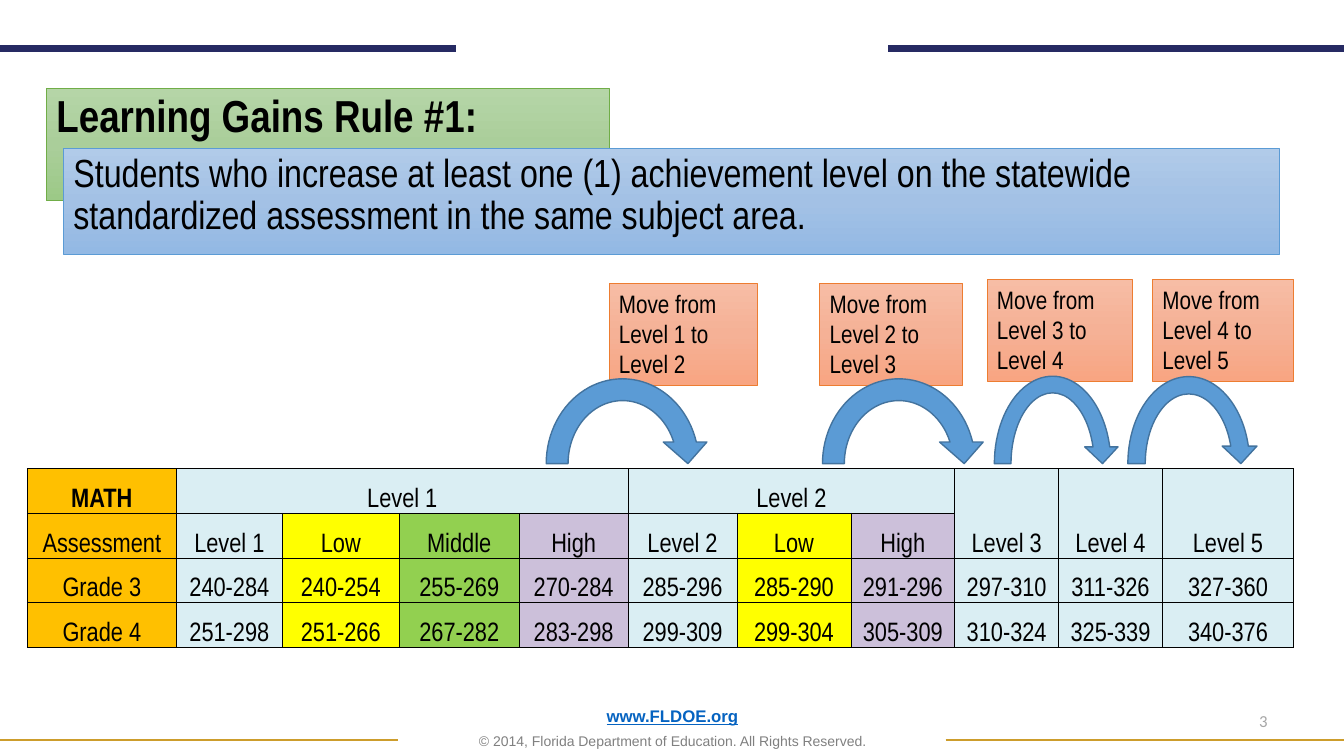
from copy import deepcopy
from dataclasses import dataclass

from lxml.etree import SubElement
from pptx import Presentation
from pptx.dml.color import RGBColor
from pptx.enum.shapes import MSO_CONNECTOR, MSO_SHAPE
from pptx.enum.text import MSO_ANCHOR, MSO_AUTO_SIZE, PP_ALIGN
from pptx.oxml.ns import qn
from pptx.util import Inches, Pt


@dataclass(frozen=True)
class Theme:
    width: float = 13.33
    height: float = 7.5
    narrow: str = "Arial Narrow"
    sans: str = "Arial"
    number_font: str = "Calibri"
    title_size: int = 32
    body_size: int = 28
    table_size: int = 19
    callout_size: int = 18
    footer_size: int = 12
    copyright_size: int = 10
    black: str = "000000"
    navy: str = "262A63"
    gold: str = "CD9D2C"
    link: str = "0563C1"
    grey: str = "808080"
    pale_grey: str = "A6A6A6"
    green: tuple = ("B5D5A7", "AACE9A", "9CC987")
    green_line: str = "70AD47"
    blue: tuple = ("B1CBE9", "A3C1E5", "93B9E4")
    blue_line: str = "5B9BD5"
    orange: tuple = ("F7BDA5", "F5B196", "F8A582")
    orange_line: str = "ED7D31"
    arrow_line: str = "43739E"
    head: str = "FFC000"
    level: str = "DAEEF3"
    low: str = "FFFF00"
    middle: str = "92D050"
    high: str = "CCC0DA"


T = Theme()


def rgb(value):
    return RGBColor.from_string(value)


def emu(box):
    return [Inches(v) for v in box]


def style(p, size, color, font=T.narrow, bold=False, align=PP_ALIGN.LEFT, spacing=None):
    p.alignment = align
    p.line_spacing = spacing
    for r in p.runs:
        r.font.name, r.font.size, r.font.bold = font, Pt(size), bold
        r.font.color.rgb = rgb(color)


def gradient_panel(sp, colors, line):
    """Fill a shape with a three-stop vertical gradient and a thin outline."""
    sp.fill.gradient()
    sp.fill.gradient_angle = 270
    stops = sp._element.spPr.find(".//" + qn("a:gsLst"))
    stops.insert(1, deepcopy(stops[0]))
    for stop, color, position in zip(sp.fill.gradient_stops, colors, (0, 0.5, 1)):
        stop.color.rgb = rgb(color)
        stop.position = position
    sp.line.color.rgb = rgb(line)
    sp.line.width = Pt(0.5)


def add_panel(s, box, text, size, colors, line, spacing=None):
    sp = s.shapes.add_shape(MSO_SHAPE.RECTANGLE, *emu(box))
    sp.shadow.inherit = False
    gradient_panel(sp, colors, line)
    tf = sp.text_frame
    tf.text = text
    tf.word_wrap = True
    tf.vertical_anchor = MSO_ANCHOR.TOP
    style(tf.paragraphs[0], size, T.black, spacing=spacing)


def add_rules(s, y, length, color, width):
    """Two rules of equal length, one from each edge of the slide."""
    for x in (0, T.width - length):
        line = s.shapes.add_connector(
            MSO_CONNECTOR.STRAIGHT, *emu((x, y, x + length, y)))
        line.line.color.rgb = rgb(color)
        line.line.width = Pt(width)
        SubElement(line._element.spPr, qn("a:effectLst"))


def add_footer(s, box):
    tf = s.shapes.add_textbox(*emu(box)).text_frame
    tf.word_wrap = True
    tf.vertical_anchor = MSO_ANCHOR.BOTTOM
    tf.text = ("www.FLDOE.org\n"
               "© 2014, Florida Department of Education. All Rights Reserved.")
    site, rights = tf.paragraphs
    style(site, T.footer_size, T.link, T.sans, True, PP_ALIGN.CENTER, 0.9)
    site.runs[0].font.underline = True
    style(rights, T.copyright_size, T.grey, T.sans, False, PP_ALIGN.CENTER, 0.9)
    rights.space_before = Pt(6)


def add_page_number(s, box):
    tf = s.shapes.add_textbox(*emu(box)).text_frame
    tf.text = "3"
    tf.word_wrap = True
    tf.vertical_anchor = MSO_ANCHOR.MIDDLE
    style(tf.paragraphs[0], T.footer_size, T.pale_grey, T.number_font, align=PP_ALIGN.RIGHT)


def set_title(s, box):
    title = s.shapes.title
    title.left, title.top, title.width, title.height = emu(box)
    gradient_panel(title, T.green, T.green_line)
    tf = title.text_frame
    tf.text = "Learning Gains Rule #1:"
    tf.auto_size = MSO_AUTO_SIZE.NONE
    tf.vertical_anchor = MSO_ANCHOR.TOP
    style(tf.paragraphs[0], T.title_size, T.black, bold=True, spacing=0.9)


def format_cell(cell, color, bold):
    cell.margin_left = cell.margin_right = cell.margin_top = Inches(0.01)
    cell.margin_bottom = 0
    cell.vertical_anchor = MSO_ANCHOR.BOTTOM
    tcPr = cell._tc.get_or_add_tcPr()
    for side in ("a:lnL", "a:lnR", "a:lnT", "a:lnB"):
        ln = SubElement(tcPr, qn(side), w=str(Pt(0.5)))
        SubElement(SubElement(ln, qn("a:solidFill")), qn("a:srgbClr"), val=T.black)
    cell.fill.solid()
    cell.fill.fore_color.rgb = rgb(color)
    style(cell.text_frame.paragraphs[0], T.table_size, T.black, bold=bold, align=PP_ALIGN.CENTER)


def add_score_table(s, box):
    rows = [
        ["MATH", "Level 1", "", "", "", "Level 2", "", "", "Level 3", "Level 4", "Level 5"],
        ["Assessment", "Level 1", "Low", "Middle", "High", "Level 2", "Low", "High", "", "", ""],
        ["Grade 3", "240-284", "240-254", "255-269", "270-284", "285-296",
         "285-290", "291-296", "297-310", "311-326", "327-360"],
        ["Grade 4", "251-298", "251-266", "267-282", "283-298", "299-309",
         "299-304", "305-309", "310-324", "325-339", "340-376"],
    ]
    widths = [1.48, 1.05, 1.16, 1.19, 1.08, 1.08, 1.13, 1.03, 1.03, 1.03, 1.3]
    fills = [T.head, T.level, T.low, T.middle, T.high, T.level, T.low, T.high] + [T.level] * 3
    frame = s.shapes.add_table(len(rows), len(widths), *emu(box))
    table = frame.table
    table.first_row = table.horz_banding = False
    for column, width in zip(table.columns, widths):
        column.width = Inches(box[2] * width / sum(widths))
    for i, row in enumerate(rows):
        for j, text in enumerate(row):
            cell = table.cell(i, j)
            cell.text = text
            format_cell(cell, T.level if i == 0 and j else fills[j], i == j == 0)
    # Level headings: across their sub-levels, or down both heading rows
    for start, end in [((0, 1), (0, 4)), ((0, 5), (0, 7))] + [
            ((0, j), (1, j)) for j in (8, 9, 10)]:
        table.cell(*start).merge(table.cell(*end))


def add_moves(s, box):
    """Callouts at the top of the box, with curved arrows below them."""
    left, top, _, height = box
    callout_h, arrow_h = 1.01, 1.9
    callouts = [(0.73, 0.04, 1.47), (2.82, 0.04, 1.42), (4.48, 0, 1.44), (6.12, 0, 1.4)]
    arrows = [(0, 1.73), (2.74, 1.73), (4.47, 1.32), (5.79, 1.38)]
    for n, (x, y, w) in enumerate(callouts, 1):
        add_panel(s, (left + x, top + y, w, callout_h), f"Move from Level {n} to Level {n + 1}",
                  T.callout_size, T.orange, T.orange_line)
    for x, w in arrows:
        sp = s.shapes.add_shape(
            MSO_SHAPE.CIRCULAR_ARROW, *emu((left + x, top + height - arrow_h, w, arrow_h)))
        sp.shadow.inherit = False
        sp.fill.solid()
        sp.fill.fore_color.rgb = rgb(T.blue_line)
        sp.line.color.rgb = rgb(T.arrow_line)
        sp.line.width = Pt(1)


def main():
    prs = Presentation()
    prs.slide_width, prs.slide_height = Inches(T.width), Inches(T.height)
    s = prs.slides.add_slide(prs.slide_layouts[5])
    # Frame of the slide
    add_footer(s, (0.92, 7.06, 11.5, 0.43))
    add_rules(s, 0.48, 4.52, T.navy, 5)
    add_rules(s, 7.34, 3.95, T.gold, 1)
    add_page_number(s, (9.56, 6.95, 3.11, 0.4))
    # Rule, table and level moves
    set_title(s, (0.46, 0.88, 5.58, 1.11))
    add_score_table(s, (0.27, 4.65, 12.56, 1.77))
    add_moves(s, (5.31, 2.77, 7.52, 2.78))
    add_panel(s, (0.63, 1.47, 12.06, 1.05),
              "Students who increase at least one (1) achievement level on the statewide "
              "standardized assessment in the same subject area.",
              T.body_size, T.blue, T.blue_line, 0.9)
    prs.save("out.pptx")


if __name__ == "__main__":
    main()
